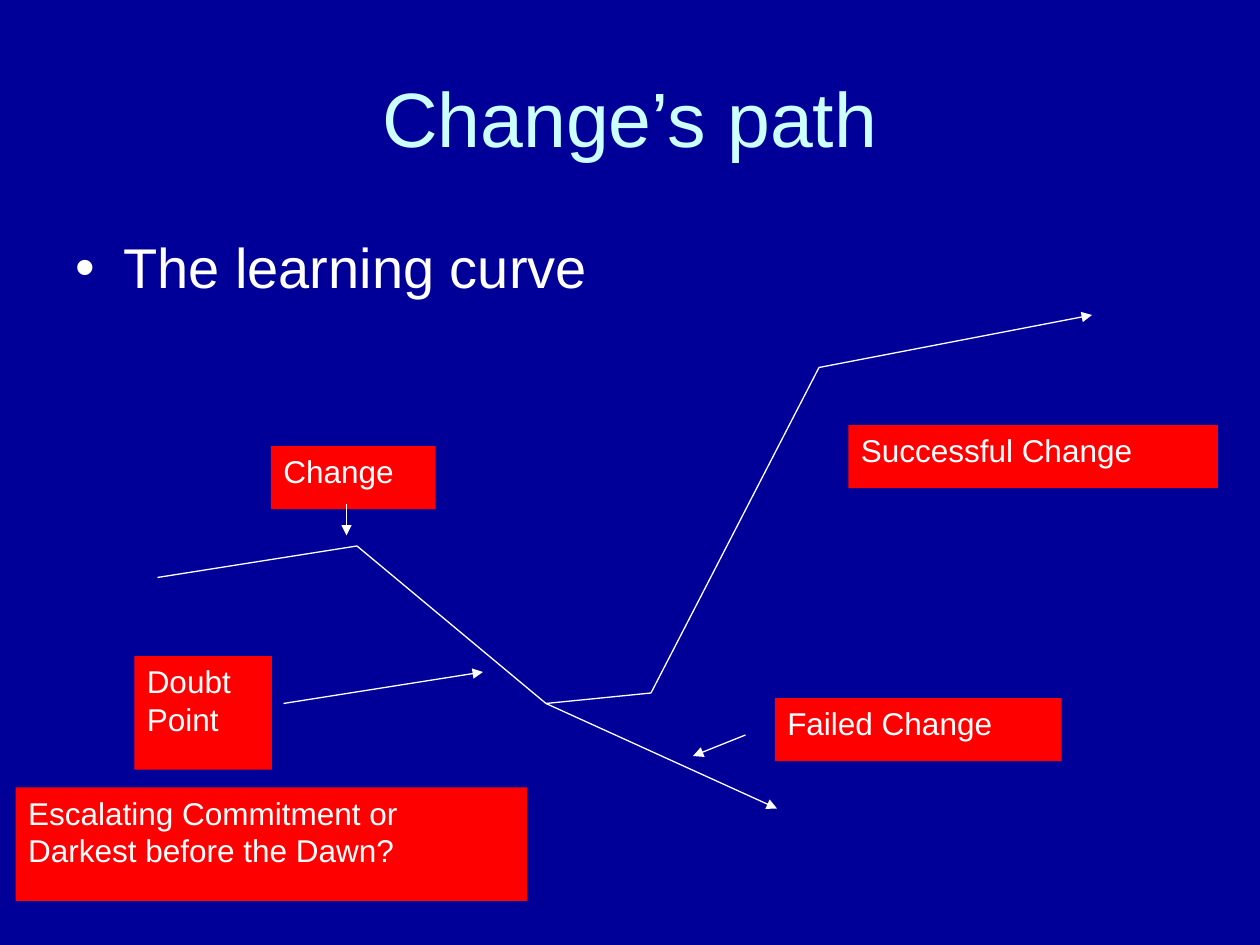
from pptx import Presentation
from pptx import util as u
from pptx.dml.color import RGBColor
from pptx.enum import shapes, text
from pptx.oxml.ns import qn
from lxml import etree

HUES = {"back": "000099", "title": "CCFFFF", "ink": "FFFFFF", "label": "FF0000"}
COLS, ROWS = 120, 90
WIDE, HIGH = u.Inches(10), u.Inches(7.5)


def hue(name):
    return RGBColor.from_string(HUES[name])


def spot(col, row):
    return round(WIDE * col / COLS), round(HIGH * row / ROWS)


def paint(fill, name):
    fill.solid()
    fill.fore_color.rgb = hue(name)


def write(shape, words, size=18, color="ink", align="LEFT", anchor="TOP", bullet=None):
    frame = shape.text_frame
    frame.word_wrap = True
    frame.vertical_anchor = getattr(text.MSO_ANCHOR, anchor)
    frame.text = words
    for para in frame.paragraphs:
        para.alignment = getattr(text.PP_ALIGN, align)
        if bullet:
            props = para._p.get_or_add_pPr()
            indent = u.Inches(0.38)
            props.set("marL", str(indent))
            props.set("indent", str(-indent))
            etree.SubElement(props, qn("a:buFont")).set("typeface", "Arial")
            etree.SubElement(props, qn("a:buChar")).set("char", bullet)
        for run in para.runs:
            run.font.name = "Arial"
            run.font.size = u.Pt(size)
            run.font.color.rgb = hue(color)


def prose(slide, area, words, **style):
    box = slide.shapes.add_textbox(*spot(*area[:2]), *spot(*area[2:]))
    write(box, words, **style)


def label(slide, area, words):
    box = slide.shapes.add_shape(
        shapes.MSO_SHAPE.RECTANGLE, *spot(*area[:2]), *spot(*area[2:]))
    box.shadow.inherit = False
    paint(box.fill, "label")
    box.line.fill.background()
    write(box, words)


def stroke(slide, start, end, arrow=False):
    line = slide.shapes.add_connector(
        shapes.MSO_CONNECTOR.STRAIGHT, *spot(*start), *spot(*end))
    line.line.width = u.Pt(0.75)
    line.line.color.rgb = hue("ink")
    props = line._element.spPr
    if arrow:
        etree.SubElement(props.find(qn("a:ln")), qn("a:tailEnd")).set("type", "triangle")
    etree.SubElement(props, qn("a:effectLst"))


def main():
    deck = Presentation()
    deck.slide_width, deck.slide_height = WIDE, HIGH
    slide = deck.slides.add_slide(deck.slide_layouts[6])
    paint(slide.background.fill, "back")

    prose(slide, (6, 3.6, 108, 15), "Change’s path",
          size=44, color="title", align="CENTER", anchor="MIDDLE")
    prose(slide, (6, 21.6, 108, 59), "The learning curve", size=32, bullet="•")

    labels = [
        ((25.8, 42.5, 15.7, 6), "Change"),
        ((73.8, 66.5, 27.3, 6), "Failed Change"),
        ((80.8, 40.5, 35.2, 6), "Successful Change"),
        ((12.8, 62.5, 13.1, 10.8), "Doubt\nPoint"),
        ((1.5, 75, 48.7, 10.8), "Escalating Commitment or\nDarkest before the Dawn?"),
    ]
    for area, words in labels:
        label(slide, area, words)

    curve = [(15, 55), (34, 52), (52, 67), (62, 66), (78, 35)]
    for start, end in zip(curve, curve[1:]):
        stroke(slide, start, end)

    arrows = [
        (curve[-1], (104, 30)),
        (curve[2], (74, 77)),
        ((33, 48), (33, 51)),
        ((71, 70), (66, 72)),
        ((27, 67), (46, 64)),
    ]
    for start, end in arrows:
        stroke(slide, start, end, arrow=True)

    deck.save("out.pptx")


if __name__ == "__main__":
    main()
